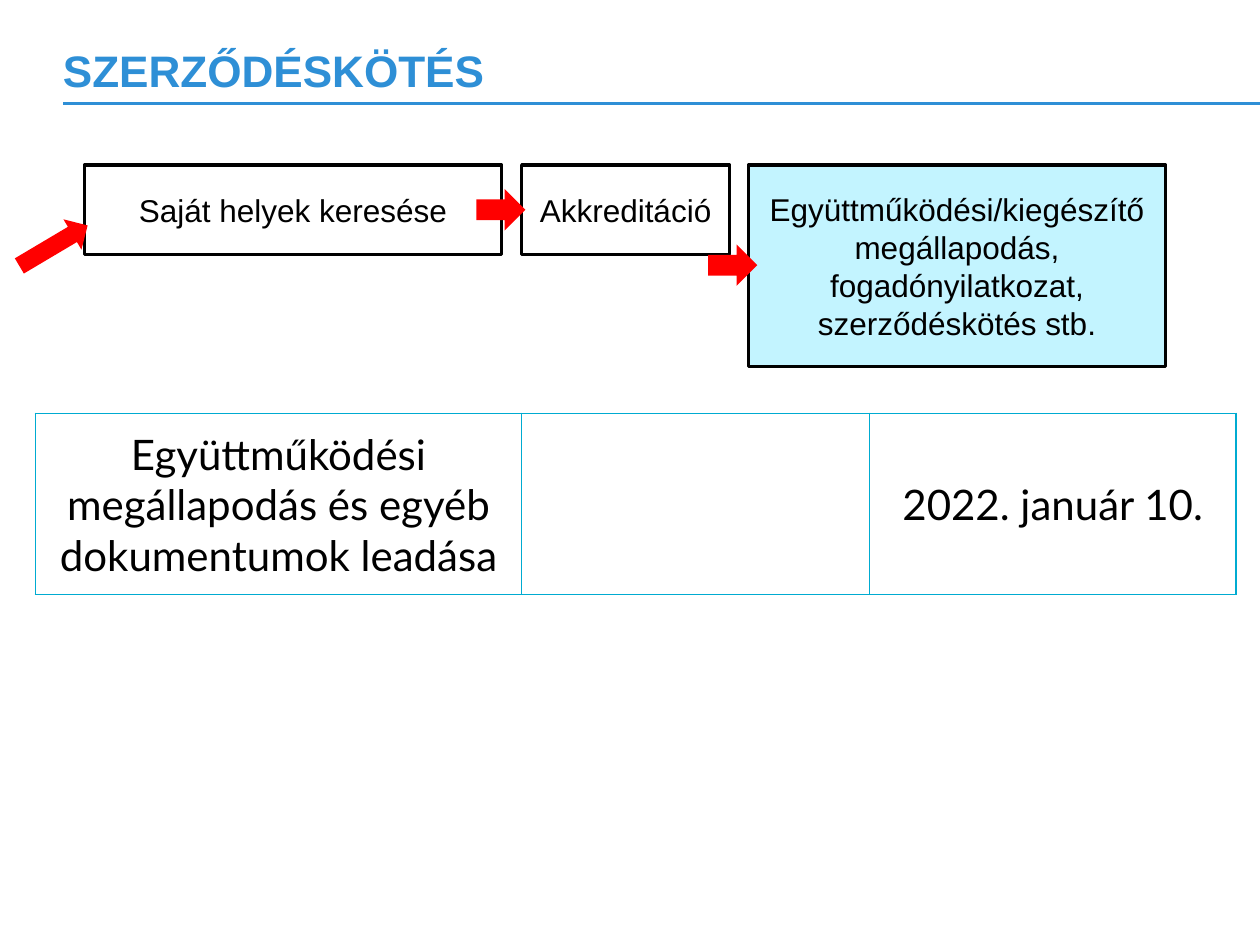
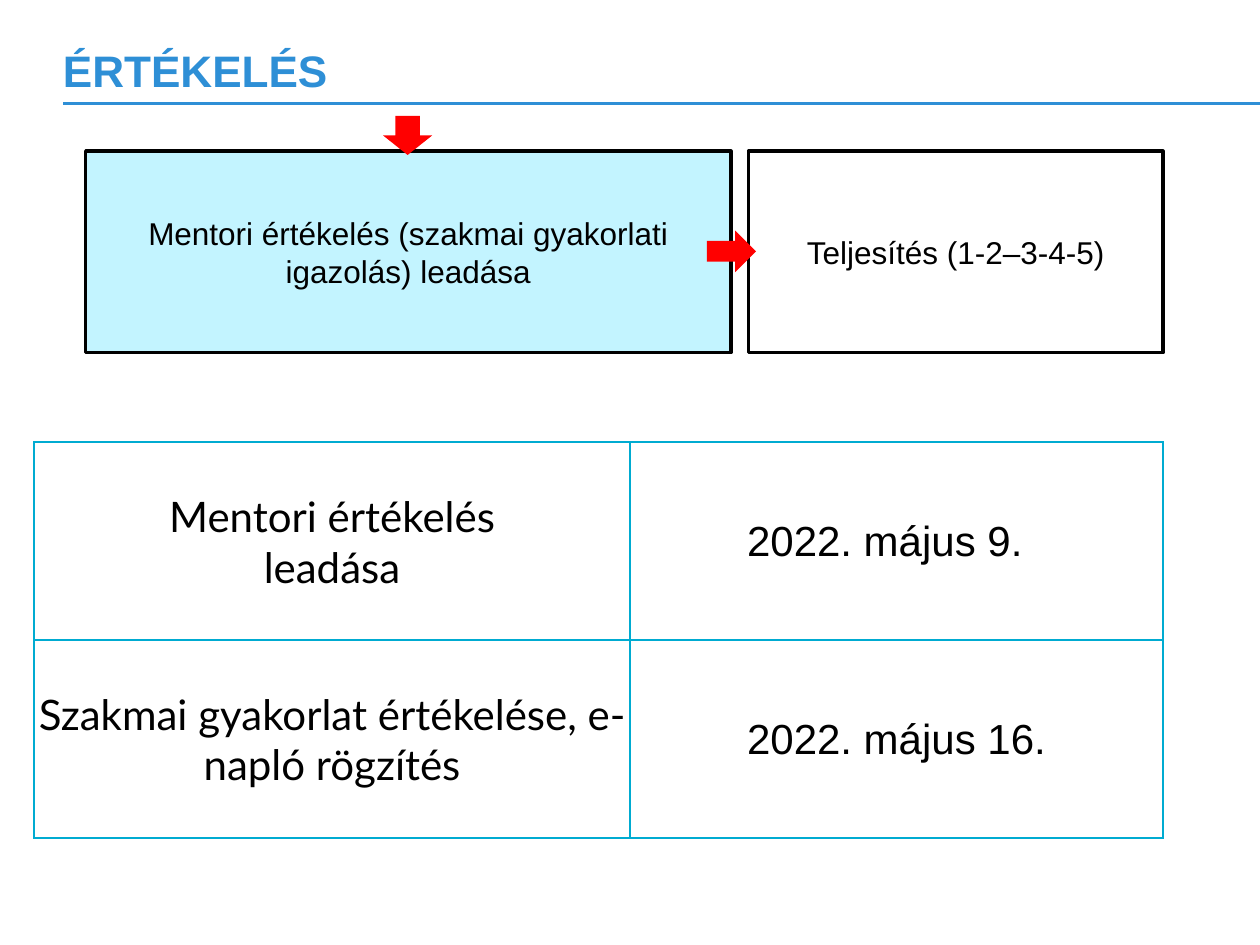
from pptx import Presentation
from pptx.util import Inches, Pt
from pptx.dml.color import RGBColor
from pptx.enum import shapes, text
from pptx.oxml import parse_xml
from pptx.oxml import ns

BLUE, TEAL, RED = "2E8FD6", "00ABD1", "FF0000"
WHITE, PALE, BLACK = "FFFFFF", "C3F4FF", "000000"
RIGHT = shapes.MSO_SHAPE.RIGHT_ARROW
DOWN = shapes.MSO_SHAPE.DOWN_ARROW
MID = text.MSO_ANCHOR.MIDDLE


def tint(code):
    return RGBColor.from_string(code)


def write(frame, words, font, size, color=BLACK, align=text.PP_ALIGN.CENTER):
    frame.word_wrap = True
    frame.text = words
    for para in frame.paragraphs:
        para.alignment = align
        para.font.name = font
        para.font.size = Pt(size)
        para.font.color.rgb = tint(color)


pages = [
    {
        "title": "SZERZŐDÉSKÖTÉS",
        "steps": [
            (0.67, 1.31, 3.31, 0.71, WHITE, "Saját helyek keresése"),
            (4.14, 1.31, 1.65, 0.71, WHITE, "Akkreditáció"),
            (5.94, 1.31, 3.31, 1.6, PALE,
             "Együttműködési/kiegészítő megállapodás, fogadónyilatkozat, szerződéskötés stb."),
        ],
        "arrows": [
            (RIGHT, 3.78, 1.5, 0.39, 0.33, 0),
            (RIGHT, 5.62, 1.94, 0.39, 0.33, 0),
            (RIGHT, 0.11, 1.81, 0.63, 0.28, 329.3),
        ],
        "place": (0.28, 3.28),
        "cols": [3.86, 2.76, 2.91],
        "high": 1.44,
        "fonts": ["Lato", "Lato", "Lato"],
        "rows": [["Együttműködési megállapodás és egyéb dokumentumok leadása", "", "2022. január 10."]],
    },
    {
        "title": "ÉRTÉKELÉS",
        "steps": [
            (0.68, 1.2, 5.12, 1.6, PALE, "Mentori értékelés (szakmai gyakorlati igazolás) leadása"),
            (5.94, 1.2, 3.29, 1.6, WHITE, "Teljesítés (1-2–3-4-5)"),
        ],
        "arrows": [
            (RIGHT, 5.61, 1.83, 0.39, 0.33, 0),
            (DOWN, 3.04, 0.92, 0.39, 0.31, 0),
        ],
        "place": (0.27, 3.51),
        "cols": [4.73, 4.23],
        "high": 1.57,
        "fonts": ["Lato", "Arial"],
        "rows": [
            ["Mentori értékelés\nleadása", "2022. május 9.  "],
            ["Szakmai gyakorlat értékelése, e-napló rögzítés", "2022. május 16."],
        ],
    },
]

deck = Presentation()
deck.slide_width, deck.slide_height = Inches(10), Inches(7.5)

for page in pages:
    slide = deck.slides.add_slide(deck.slide_layouts[6])
    items = slide.shapes

    rule = items.add_connector(shapes.MSO_CONNECTOR.STRAIGHT, Inches(0.5), Inches(0.82), Inches(10), Inches(0.82))
    rule.line.color.rgb = tint(BLUE)
    rule.line.width = Pt(1.5)
    rule._element.spPr.append(parse_xml(f"<a:effectLst {ns.nsdecls('a')}/>"))

    title = items.add_textbox(Inches(0.5), Inches(0.4), Inches(9), Inches(0.31)).text_frame
    title.margin_left = title.margin_right = title.margin_top = title.margin_bottom = 0
    title.vertical_anchor = MID
    write(title, page["title"], "Arial", 25.2, BLUE, text.PP_ALIGN.LEFT)
    title.paragraphs[0].font.bold = True

    for *spot, fill, words in page["steps"]:
        step = items.add_shape(shapes.MSO_SHAPE.RECTANGLE, *map(Inches, spot))
        step.shadow.inherit = False
        step.fill.solid()
        step.fill.fore_color.rgb = tint(fill)
        step.line.color.rgb = tint(BLACK)
        step.line.width = Pt(2)
        step.text_frame.vertical_anchor = MID
        write(step.text_frame, words, "Arial", 18)

    for kind, *spot, turn in page["arrows"]:
        arrow = items.add_shape(kind, *map(Inches, spot))
        arrow.shadow.inherit = False
        arrow.fill.solid()
        arrow.fill.fore_color.rgb = tint(RED)
        arrow.line.fill.background()
        arrow.rotation = turn

    rows, cols, high = page["rows"], page["cols"], page["high"]
    spot = (*page["place"], sum(cols), high * len(rows))
    table = items.add_table(len(rows), len(cols), *map(Inches, spot)).table
    table.first_row = table.horz_banding = False
    for col, wide in zip(table.columns, cols):
        col.width = Inches(wide)
    for row, line in zip(table.rows, rows):
        row.height = Inches(high)
        for cell, words, font in zip(row.cells, line, page["fonts"]):
            cell.margin_left = cell.margin_right = cell.margin_top = Inches(0.01)
            cell.margin_bottom = 0
            cell.vertical_anchor = MID
            write(cell.text_frame, words, font, 24)
            props = cell._tc.get_or_add_tcPr()
            for side in ("lnL", "lnR", "lnT", "lnB"):
                props.append(parse_xml(
                    f'<a:{side} {ns.nsdecls("a")} w="{Pt(1)}"><a:solidFill>'
                    f'<a:srgbClr val="{TEAL}"/></a:solidFill></a:{side}>'))
            cell.fill.solid()
            cell.fill.fore_color.rgb = tint(WHITE)

deck.save("out.pptx")
